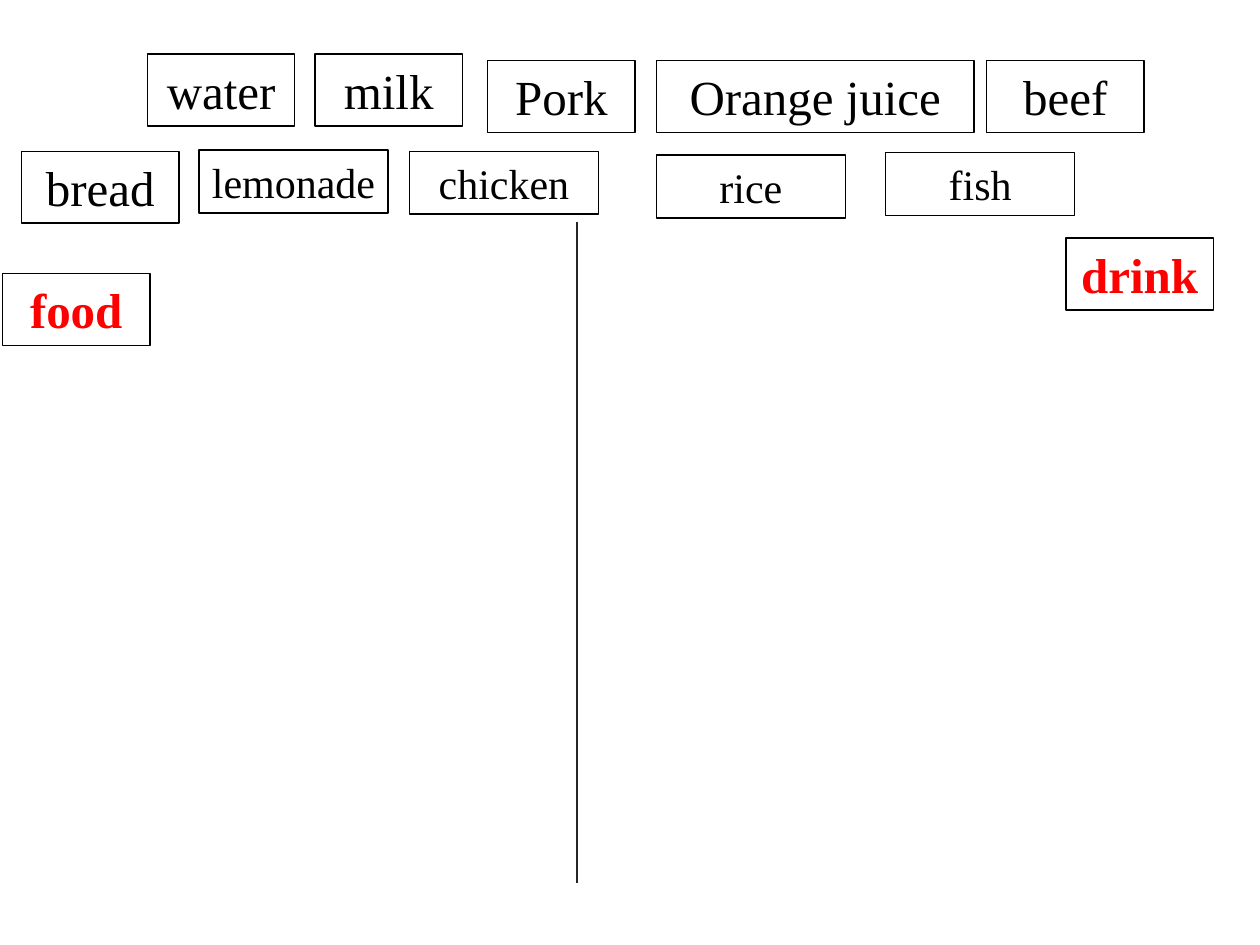
from pptx import Presentation
from pptx.dml.color import RGBColor
from pptx.enum.shapes import MSO_CONNECTOR
from pptx.enum.text import MSO_AUTO_SIZE, PP_ALIGN
from pptx.util import Inches, Pt
from lxml import etree

LINE = MSO_CONNECTOR.STRAIGHT
GROW = MSO_AUTO_SIZE.SHAPE_TO_FIT_TEXT
MID = PP_ALIGN.CENTER

HEADS = [("food", 0.02, 2.17, 1.17), ("drink", 8.46, 1.89, 1.17)]
WORDS = [
    ("water", 1.17, 0.43, 1.17),
    ("milk", 2.5, 0.43, 1.17),
    ("Pork", 3.87, 0.48, 1.17),
    ("Orange juice", 5.21, 0.48, 2.52),
    ("beef", 7.83, 0.48, 1.25),
    ("bread", 0.17, 1.2, 1.25),
]
SMALL = [
    ("lemonade", 1.58, 1.19, 1.5),
    ("chicken", 3.25, 1.2, 1.5),
    ("rice", 5.21, 1.23, 1.5),
    ("fish", 7.03, 1.21, 1.5),
]
SPLIT = (4.58, 1.76, 4.58, 7.01)

THEME = {
    "font": "Times New Roman",
    "ink": RGBColor(0, 0, 0),
    "red": RGBColor(255, 0, 0),
    "rule": RGBColor(0x26, 0x26, 0x26),
    "big": Pt(28),
    "small": Pt(24),
    "edge": Pt(0.75),
}
HEAD = {"size": THEME["big"], "bold": True, "name": THEME["font"]}
WORD = {"size": THEME["big"], "bold": False, "name": THEME["font"]}
LESS = {**WORD, "size": THEME["small"]}
GROUPS = [
    (HEADS, HEAD, THEME["red"], 0.57),
    (WORDS, WORD, THEME["ink"], 0.57),
    (SMALL, LESS, THEME["ink"], 0.5),
]


def apply(item, style):
    for key, value in style.items():
        setattr(item, key, value)


def draw_edge(line, color):
    line.color.rgb = color
    line.width = THEME["edge"]


def add_card(slide, card, style, color, height):
    text, left, top, width = card
    box = slide.shapes.add_textbox(*map(Inches, (left, top, width, height)))
    draw_edge(box.line, THEME["ink"])
    frame = box.text_frame
    apply(frame, {"word_wrap": True, "auto_size": GROW})
    para = frame.paragraphs[0]
    apply(para, {"alignment": MID, "space_before": Pt(2)})
    run = para.add_run()
    run.text = text
    apply(run.font, style)
    run.font.color.rgb = color


def add_split(slide):
    rule = slide.shapes.add_connector(LINE, *map(Inches, SPLIT))
    draw_edge(rule.line, THEME["rule"])
    props = rule.line._get_or_add_ln().getparent()
    space = etree.QName(props[0]).namespace
    etree.SubElement(props, f"{{{space}}}effectLst")


def main():
    deck = Presentation()
    apply(deck, {"slide_width": Inches(10), "slide_height": Inches(7.5)})
    slide = deck.slides.add_slide(deck.slide_layouts[6])
    add_split(slide)
    for cards, style, color, height in GROUPS:
        for card in cards:
            add_card(slide, card, style, color, height)
    deck.save("out.pptx")


if __name__ == "__main__":
    main()
